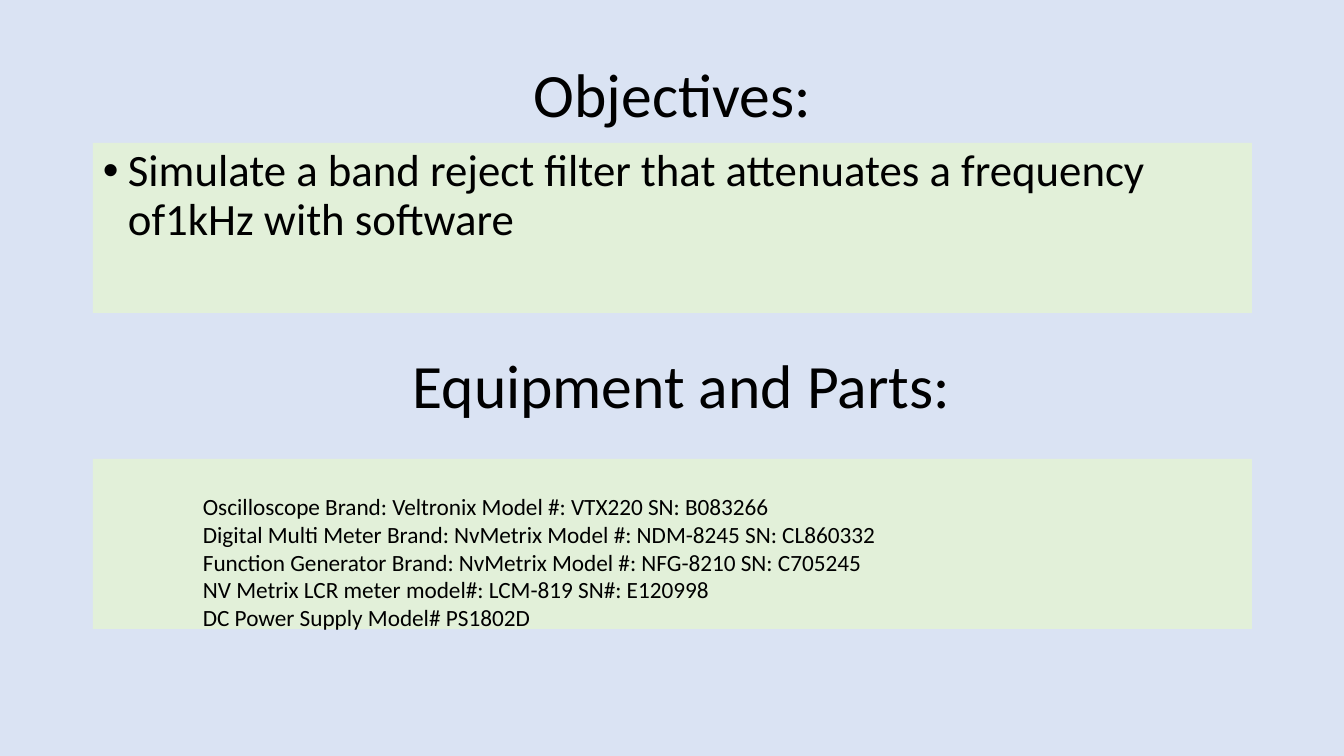
import pptx
import pptx.util
import pptx.dml.color
import pptx.enum.text
import pptx.oxml.ns
import lxml.etree

# Content
OBJECTIVES_HEADING = "Objectives:"
OBJECTIVE = "Simulate a band reject filter that attenuates a frequency of1kHz with software"
EQUIPMENT_HEADING = "Equipment and Parts:"
EQUIPMENT = [
    "Oscilloscope Brand: Veltronix Model #: VTX220 SN: B083266",
    "Digital Multi Meter Brand: NvMetrix Model #: NDM-8245 SN: CL860332",
    "Function Generator Brand: NvMetrix Model #: NFG-8210 SN: C705245",
    "NV Metrix LCR meter model#: LCM-819 SN#: E120998",
    "DC Power Supply Model# PS1802D",
]

# Style
FONT = "Calibri"
BLACK = pptx.dml.color.RGBColor(0x00, 0x00, 0x00)
PALE_BLUE = pptx.dml.color.RGBColor(0xDA, 0xE3, 0xF3)
PALE_GREEN = pptx.dml.color.RGBColor(0xE2, 0xF0, 0xD9)

# Layout in px
SLIDE_WIDTH, SLIDE_HEIGHT = 1344, 756
EMU_PER_PX = 12192000 / SLIDE_WIDTH
LEFT, WIDTH = 93, 1159
HEADING_HEIGHT, PANEL_HEIGHT = 146, 170
INDENT = 25
EQUIPMENT_TOP_MARGIN = 33


def px(length):
    return pptx.util.Emu(round(length * EMU_PER_PX))


def place(left, top, height):
    return px(left), px(top), px(WIDTH), px(height)


def write(shape, lines, size, line_spacing=1.0, alignment=pptx.enum.text.PP_ALIGN.LEFT):
    frame = shape.text_frame
    frame.word_wrap = True
    frame.auto_size = pptx.enum.text.MSO_AUTO_SIZE.NONE
    frame.text = "\n".join(lines)
    for paragraph in frame.paragraphs:
        paragraph.alignment = alignment
        paragraph.line_spacing = line_spacing
        paragraph.space_before = pptx.util.Pt(0)
        paragraph.font.name = FONT
        paragraph.font.size = pptx.util.Pt(size)
        paragraph.font.color.rgb = BLACK
    return frame


def write_heading(shape, text):
    frame = write(shape, [text], 44, 0.9, pptx.enum.text.PP_ALIGN.CENTER)
    frame.vertical_anchor = pptx.enum.text.MSO_ANCHOR.MIDDLE


def add_panel(slide, top):
    panel = slide.shapes.add_textbox(*place(LEFT, top, PANEL_HEIGHT))
    panel.fill.solid()
    panel.fill.fore_color.rgb = PALE_GREEN
    return panel


def indent(paragraph, margin, first_line=0):
    properties = paragraph._p.get_or_add_pPr()
    properties.set("marL", str(px(margin)))
    properties.set("indent", str(px(first_line)))
    return properties


def main():
    presentation = pptx.Presentation()
    presentation.slide_width = px(SLIDE_WIDTH)
    presentation.slide_height = px(SLIDE_HEIGHT)
    slide = presentation.slides.add_slide(presentation.slide_layouts[5])
    slide.background.fill.solid()
    slide.background.fill.fore_color.rgb = PALE_BLUE

    # Objectives
    title = slide.shapes.title
    title.left, title.top, title.width, title.height = place(LEFT, 25, HEADING_HEIGHT)
    write_heading(title, OBJECTIVES_HEADING)
    objectives = write(add_panel(slide, 143), [OBJECTIVE], 32, 0.9)
    properties = indent(objectives.paragraphs[0], INDENT, -INDENT)
    bullet_font = lxml.etree.SubElement(properties, pptx.oxml.ns.qn("a:buFont"))
    bullet_font.set("typeface", "Arial")
    bullet = lxml.etree.SubElement(properties, pptx.oxml.ns.qn("a:buChar"))
    bullet.set("char", "•")
    # Schema order puts the default run properties after the bullet
    properties.append(properties.find(pptx.oxml.ns.qn("a:defRPr")))

    # Equipment and parts
    heading = slide.shapes.add_textbox(*place(102, 315, HEADING_HEIGHT))
    write_heading(heading, EQUIPMENT_HEADING)
    equipment = write(add_panel(slide, 459), EQUIPMENT, 16.6)
    equipment.margin_top = px(EQUIPMENT_TOP_MARGIN)
    equipment.margin_bottom = 0
    for paragraph in equipment.paragraphs:
        indent(paragraph, 4 * INDENT)

    presentation.save("out.pptx")


if __name__ == "__main__":
    main()
